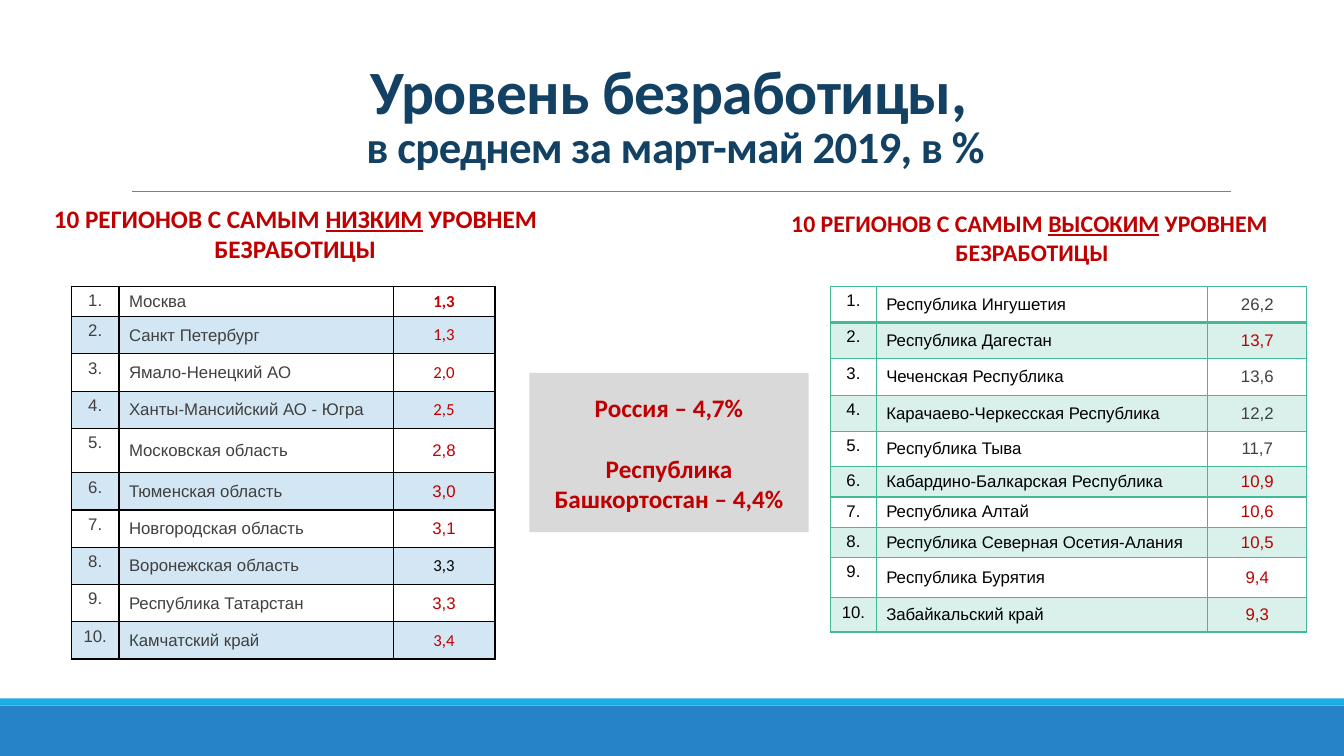
import pptx
import pptx.util
import pptx.oxml
import pptx.oxml.ns
import pptx.dml.color
import pptx.enum.text
import pptx.enum.shapes

Inches = pptx.util.Inches
Pt = pptx.util.Pt
ALIGN = pptx.enum.text.PP_ALIGN
ANCHOR = pptx.enum.text.MSO_ANCHOR

COLOURS = {
    "blue": "2683C6", "cyan": "1CADE4", "navy": "134163", "red": "C00000",
    "green": "42BA97", "dark": "404040", "rule": "808080", "panel": "D9D9D9",
    "black": "000000",
}

LOWEST = [
    ("Москва", "1,3", "Calibri", "red"),
    ("Санкт Петербург", "1,3", "Calibri", "red"),
    ("Ямало-Ненецкий АО", "2,0", "Calibri", "red"),
    ("Ханты-Мансийский АО - Югра", "2,5", "Calibri", "red"),
    ("Московская область", "2,8", "Arial", "red"),
    ("Тюменская область", "3,0", "Arial", "red"),
    ("Новгородская область", "3,1", "Arial", "red"),
    ("Воронежская область", "3,3", "Calibri", "black"),
    ("Республика Татарстан", "3,3", "Arial", "red"),
    ("Камчатский край", "3,4", "Calibri", "red"),
]

HIGHEST = [
    ("Республика Ингушетия", "26,2", "Arial", "dark"),
    ("Республика Дагестан", "13,7", "Arial", "red"),
    ("Чеченская Республика", "13,6", "Arial", "dark"),
    ("Карачаево-Черкесская Республика", "12,2", "Arial", "dark"),
    ("Республика Тыва", "11,7", "Arial", "dark"),
    ("Кабардино-Балкарская Республика", "10,9", "Arial", "red"),
    ("Республика Алтай", "10,6", "Arial", "red"),
    ("Республика Северная Осетия-Алания", "10,5", "Arial", "red"),
    ("Республика Бурятия", "9,4", "Arial", "red"),
    ("Забайкальский край", "9,3", "Arial", "red"),
]


class SlideBuilder:
    """Holds the slide style and adds each kind of element to the page."""

    def __init__(self, page):
        self.page = page

    def colour(self, name):
        return pptx.dml.color.RGBColor.from_string(COLOURS[name])

    def apply(self, target, values):
        for name, value in values.items():
            setattr(target, name, value)

    def paragraph(self, para, spans, font, layout):
        self.apply(para, layout)
        for text, changes in spans:
            span = para.add_run()
            span.text = text
            values = {**font, **changes}
            span.font.color.rgb = self.colour(values.pop("colour"))
            self.apply(span.font, values)

    def bar(self, left, top, width, height, fill):
        box = self.page.shapes.add_shape(
            pptx.enum.shapes.MSO_SHAPE.RECTANGLE,
            Inches(left), Inches(top), Inches(width), Inches(height))
        box.shadow.inherit = False
        box.fill.solid()
        box.fill.fore_color.rgb = self.colour(fill)
        box.line.fill.background()
        return box

    def rule(self, left, top, right):
        line = self.page.shapes.add_connector(
            pptx.enum.shapes.MSO_CONNECTOR.STRAIGHT,
            Inches(left), Inches(top), Inches(right), Inches(top))
        line.line.color.rgb = self.colour("rule")
        line.line.width = Pt(0.5)
        properties = line._element.spPr
        properties.append(pptx.oxml.parse_xml(
            f"<a:effectLst {pptx.oxml.ns.nsdecls('a')}/>"))

    def text(self, left, top, width, height, anchor):
        box = self.page.shapes.add_textbox(
            Inches(left), Inches(top), Inches(width), Inches(height))
        self.apply(box.text_frame, {"word_wrap": True, "vertical_anchor": anchor})
        return box.text_frame.paragraphs[0]

    def title(self):
        para = self.text(1.2, 0.31, 11, 1.45, ANCHOR.BOTTOM)
        font = {"name": "Calibri", "bold": True, "colour": "navy"}
        layout = {"alignment": ALIGN.CENTER, "line_spacing": 0.85}
        self.paragraph(para, [("Уровень безработицы, ", {"size": Pt(44)})], font, layout)
        para.add_line_break()
        self.paragraph(para, [("в среднем за март-май 2019, в %", {"size": Pt(32)})],
                       font, layout)
        for span in para.runs:
            span.font._element.set("spc", "-50")

    def heading(self, left, top, height, size, level, ending):
        para = self.text(left, top, 5.4, height, ANCHOR.MIDDLE)
        font = {"name": "Calibri", "size": Pt(size), "bold": True, "colour": "red"}
        layout = {"alignment": ALIGN.CENTER, "space_before": Pt(12), "space_after": Pt(2)}
        spans = [("10 РЕГИОНОВ С САМЫМ ", {}), (level, {"underline": True})]
        self.paragraph(para, spans, font, layout)
        for index, text in enumerate(ending):
            if index:
                para.add_line_break()
            self.paragraph(para, [(text, {})], font, layout)

    def average(self):
        frame = self.bar(5.25, 3.7, 2.77, 1.58, "panel").text_frame
        self.apply(frame, {"word_wrap": True, "vertical_anchor": ANCHOR.TOP,
                           "margin_top": Inches(0.19)})
        font = {"name": "Calibri", "size": Pt(18), "bold": True, "colour": "red"}
        self.paragraph(frame.paragraphs[0], [("Россия – 4,7%", {})], font,
                       {"alignment": ALIGN.CENTER})
        self.paragraph(frame.add_paragraph(), [("Республика Башкортостан – 4,4%", {})],
                       font, {"alignment": ALIGN.CENTER, "space_before": Pt(22)})

    def border(self, cell, colour, widths):
        properties = cell._tc.get_or_add_tcPr()
        for side, width in widths.items():
            properties.append(pptx.oxml.parse_xml(
                f'<a:ln{side} {pptx.oxml.ns.nsdecls("a")} w="{Pt(width)}">'
                f'<a:solidFill><a:srgbClr val="{COLOURS[colour]}"/></a:solidFill>'
                f'</a:ln{side}>'))

    def tint(self, cell, colour):
        cell.fill.solid()
        cell.fill.fore_color.rgb = self.colour(colour)
        shade = cell._tc.tcPr.find(".//" + pptx.oxml.ns.qn("a:solidFill")
                                   + "[last()]/" + pptx.oxml.ns.qn("a:srgbClr"))
        fill = cell._tc.tcPr.find(pptx.oxml.ns.qn("a:solidFill"))
        shade = fill[0]
        shade.append(pptx.oxml.parse_xml(
            f'<a:alpha {pptx.oxml.ns.nsdecls("a")} val="20000"/>'))

    def table(self, left, widths, heights, regions, style):
        table = self.page.shapes.add_table(
            len(regions), len(widths), Inches(left), Inches(2.84),
            Inches(sum(widths)), Inches(sum(heights))).table
        self.apply(table, {"first_row": False, "horz_banding": False})
        for column, width in zip(table.columns, widths):
            column.width = Inches(width)
        for row, height in zip(table.rows, heights):
            row.height = Inches(height)
        for index, (region, rate, face, colour) in enumerate(regions):
            plain = {"name": "Arial", "colour": style["text"]}
            leading = index == 0 and style["bold_first"]
            rate_font = {"name": face, "colour": colour, "bold": leading}
            entries = [
                (f"{index + 1}.", plain, ALIGN.CENTER, {"vertical_anchor": ANCHOR.TOP}),
                (region, plain, ALIGN.LEFT, {"vertical_anchor": ANCHOR.MIDDLE,
                                             "margin_top": 0, "margin_bottom": 0}),
                (rate, rate_font, ALIGN.CENTER, {"vertical_anchor": ANCHOR.MIDDLE}),
            ]
            sides = {"L": 1, "R": 1,
                     "T": style["divider"] if index == 1 else 1,
                     "B": style["divider"] if index == 0 else 1}
            for column, (text, font, alignment, layout) in enumerate(entries):
                cell = table.cell(index, column)
                self.apply(cell, layout)
                self.paragraph(cell.text_frame.paragraphs[0], [(text, font)],
                               {"size": Pt(12), "bold": False}, {"alignment": alignment})
                self.border(cell, style["border"], sides)
                if index % 2:
                    self.tint(cell, style["tint"])
                else:
                    cell.fill.background()


def main():
    deck = pptx.Presentation()
    deck.slide_width = Inches(13.33)
    deck.slide_height = Inches(7.5)
    builder = SlideBuilder(deck.slides.add_slide(deck.slide_layouts[6]))
    builder.bar(0, 7, 13.33, 0.5, "blue")
    builder.bar(0, 6.93, 13.33, 0.07, "cyan")
    builder.rule(1.31, 1.9, 12.21)
    builder.title()
    builder.heading(0.23, 2.01, 0.61, 18, "НИЗКИМ", [" УРОВНЕМ БЕЗРАБОТИЦЫ"])
    builder.table(0.71, [0.47, 2.72, 1.01], [0.3] + [0.37] * 3 + [0.44] + [0.37] * 5, LOWEST,
                  {"text": "dark", "border": "black", "tint": "blue",
                   "divider": 1, "bold_first": True})
    builder.heading(7.51, 1.99, 0.73, 17, "ВЫСОКИМ", [" УРОВНЕМ", " БЕЗРАБОТИЦЫ"])
    builder.table(8.24, [0.45, 3.29, 0.98], [0.36] * 4 + [0.35, 0.3, 0.3, 0.27, 0.4, 0.34],
                  HIGHEST, {"text": "black", "border": "green", "tint": "green",
                            "divider": 2, "bold_first": False})
    builder.average()
    deck.save("out.pptx")


if __name__ == "__main__":
    main()
